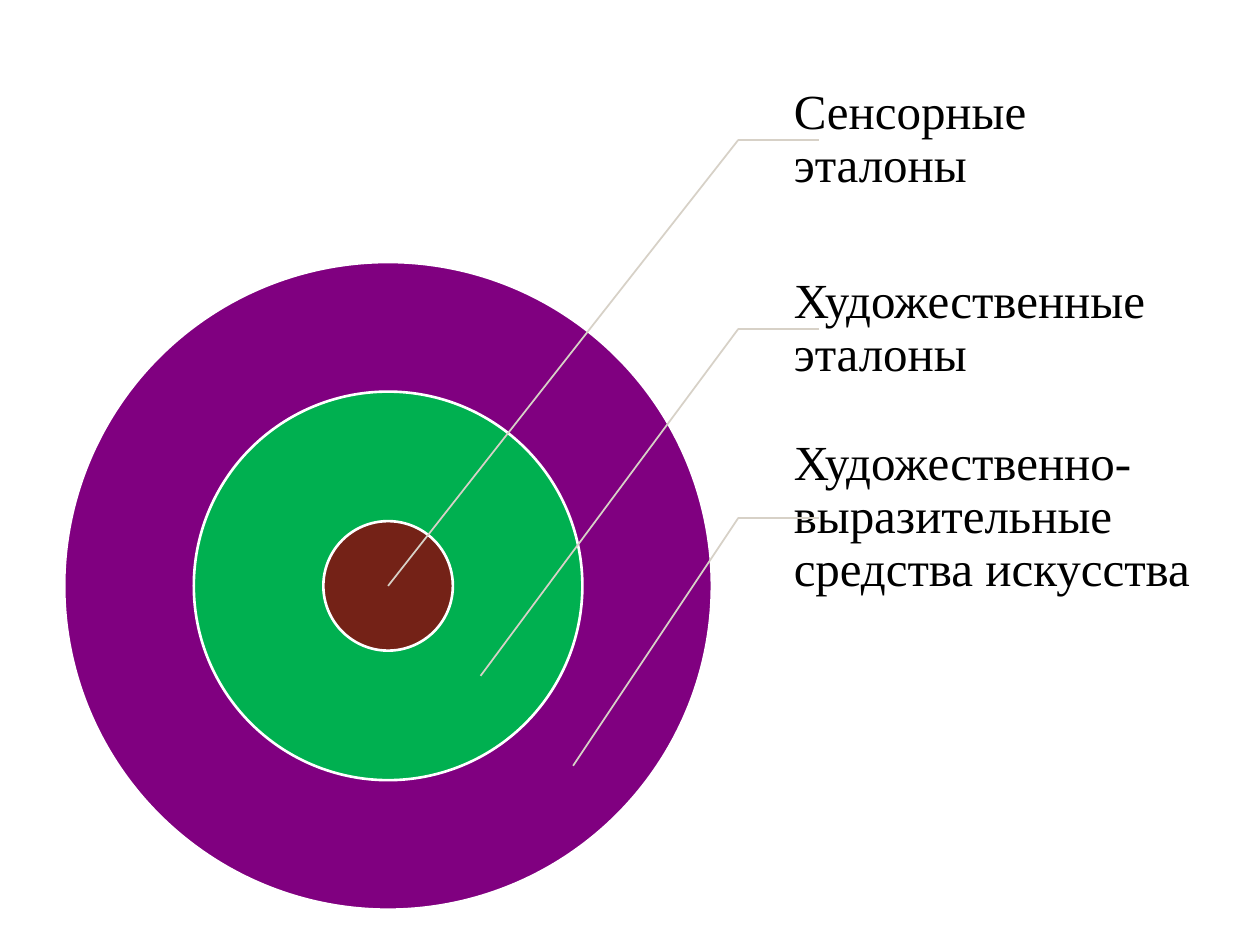
from dataclasses import dataclass

import pptx
import pptx.dml.color
import pptx.enum.shapes
import pptx.enum.text
import pptx.oxml
import pptx.util
from pptx.oxml.ns import qn
from pptx.slide import Slide

Inches = pptx.util.Inches
Pt = pptx.util.Pt


@dataclass(frozen=True)
class Theme:
    font: str = "Times New Roman"
    text_size: float = 28
    text: str = "000000"
    outline: str = "FFFFFF"
    leader: str = "D7D1C7"
    outline_width: float = 1.5
    leader_width: float = 1


@dataclass(frozen=True)
class Ring:
    label: str
    fill: str
    share: float


THEME = Theme()
PAGE_WIDTH, PAGE_HEIGHT = 10, 7.5
CENTER_X, CENTER_Y = 0.308 * PAGE_WIDTH, 0.62 * PAGE_HEIGHT
DIAMETER = 0.514 * PAGE_WIDTH
LABEL_LEFT, LABEL_WIDTH = 0.608 * PAGE_WIDTH, 0.342 * PAGE_WIDTH
LABEL_TOP, ROW_HEIGHT = 0.36, PAGE_HEIGHT / 5
ELBOW_X, LEADER_END_X = 0.586 * PAGE_WIDTH, 0.65 * PAGE_WIDTH
TARGET_STEP_X, TARGET_STEP_Y = DIAMETER / 7, DIAMETER / 7.2

RINGS = [
    Ring("Сенсорные эталоны", "742217", 0.2),
    Ring("Художественные эталоны", "00B050", 0.6),
    Ring("Художественно-выразительные средства искусства", "800080", 1),
]


def color(value: str) -> pptx.dml.color.RGBColor:
    return pptx.dml.color.RGBColor.from_string(value)


def draw_ring(page: Slide, ring: Ring) -> None:
    size = DIAMETER * ring.share
    circle = page.shapes.add_shape(
        pptx.enum.shapes.MSO_SHAPE.OVAL,
        Inches(CENTER_X - size / 2), Inches(CENTER_Y - size / 2),
        Inches(size), Inches(size),
    )
    circle.shadow.inherit = False
    circle.fill.solid()
    circle.fill.fore_color.rgb = color(ring.fill)
    circle.line.color.rgb = color(THEME.outline)
    circle.line.width = Pt(THEME.outline_width)


def draw_label(page: Slide, text: str, row: int) -> None:
    box = page.shapes.add_textbox(
        Inches(LABEL_LEFT), Inches(LABEL_TOP + row * ROW_HEIGHT),
        Inches(LABEL_WIDTH), Inches(ROW_HEIGHT),
    )
    frame = box.text_frame
    frame.word_wrap = True
    frame.vertical_anchor = pptx.enum.text.MSO_ANCHOR.MIDDLE
    frame.margin_left = Inches(0.22)
    frame.margin_right = frame.margin_top = frame.margin_bottom = Inches(0.04)
    para = frame.paragraphs[0]
    para.line_spacing = 0.9
    span = para.add_run()
    span.text = text
    span.font.name = THEME.font
    span.font.size = Pt(THEME.text_size)
    span.font.color.rgb = color(THEME.text)


def draw_line(page: Slide, start_x: float, start_y: float, end_x: float, end_y: float) -> None:
    line = page.shapes.add_connector(
        pptx.enum.shapes.MSO_CONNECTOR.STRAIGHT,
        Inches(start_x), Inches(start_y), Inches(end_x), Inches(end_y),
    )
    line.line.color.rgb = color(THEME.leader)
    line.line.width = Pt(THEME.leader_width)
    line._element.spPr.append(pptx.oxml.xmlchemy.OxmlElement("a:effectLst"))


def draw_leader(page: Slide, row: int) -> None:
    middle = LABEL_TOP + (row + 0.5) * ROW_HEIGHT
    draw_line(page, ELBOW_X, middle, LEADER_END_X, middle)
    draw_line(
        page, ELBOW_X, middle,
        CENTER_X + row * TARGET_STEP_X, CENTER_Y + row * TARGET_STEP_Y,
    )


def main() -> None:
    deck = pptx.Presentation()
    deck.slide_width, deck.slide_height = Inches(PAGE_WIDTH), Inches(PAGE_HEIGHT)
    page = deck.slides.add_slide(deck.slide_layouts[6])
    for ring in reversed(RINGS):
        draw_ring(page, ring)
    for row, ring in enumerate(RINGS):
        draw_label(page, ring.label, row)
        draw_leader(page, row)
    deck.save("out.pptx")


if __name__ == "__main__":
    main()
